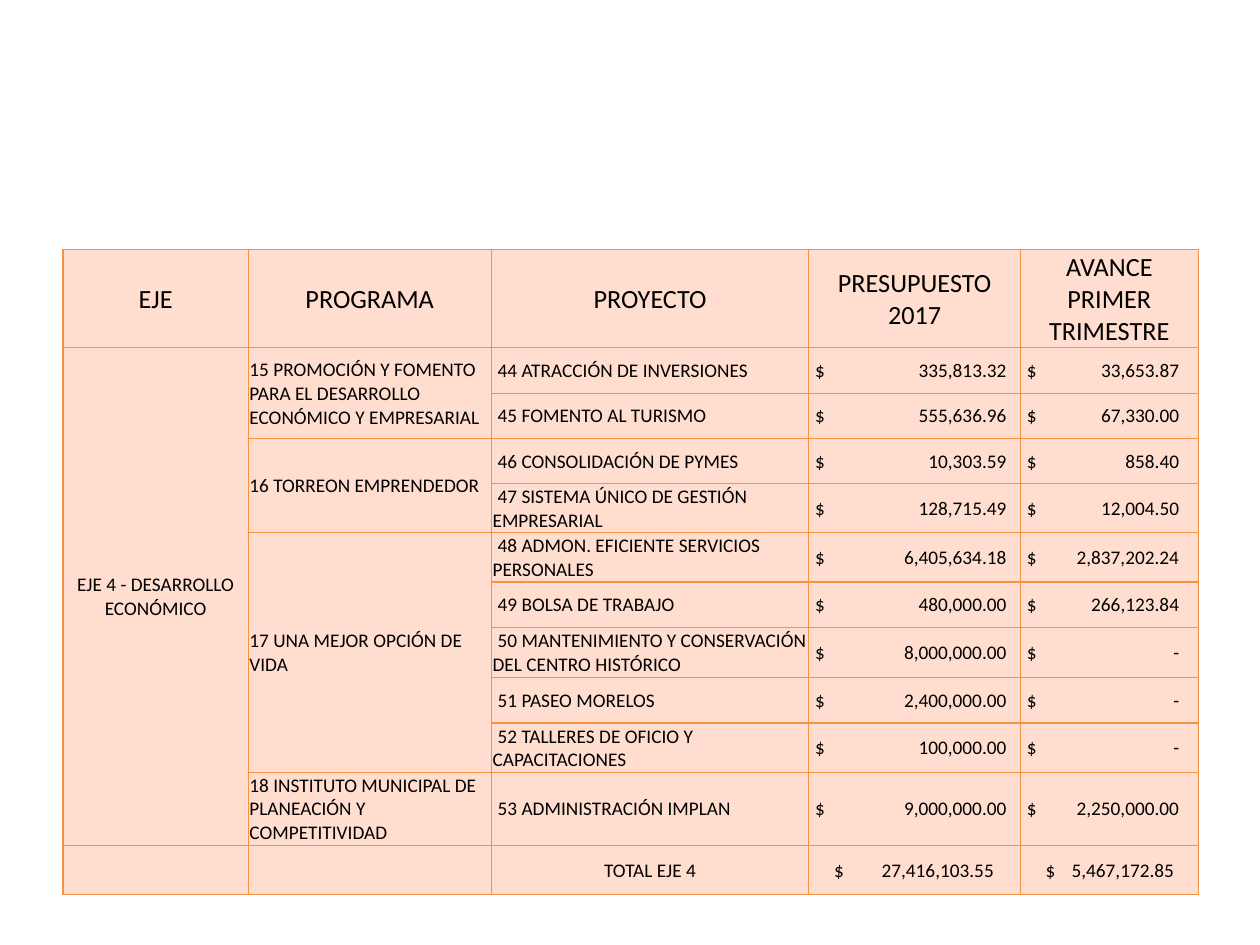
from lxml import etree
from pptx import Presentation
from pptx import util as u
from pptx.dml.color import RGBColor
from pptx.enum import text
from pptx.oxml.ns import qn

PEACH = RGBColor(0xFF, 0xDD, 0xCF)
ORANGE = RGBColor(0xF6, 0x92, 0x40)
BLACK = RGBColor(0, 0, 0)
FONT = "Calibri"
LEFT, CENTER = text.PP_ALIGN.LEFT, text.PP_ALIGN.CENTER

COLUMNS = [147, 193, 252, 168, 141]
ROWS = [78, 36, 36, 36, 39, 39, 36, 40, 36, 39, 58, 39]
AMOUNT_COLUMNS = {3: 152, 4: 121}
TOTAL_COLUMNS = {3: 127, 4: 102}

HEADINGS = ["EJE", "PROGRAMA", "PROYECTO", "PRESUPUESTO 2017", "AVANCE PRIMER TRIMESTRE"]
AXIS = "EJE 4 - DESARROLLO ECONÓMICO"
PROGRAMS = [
    ("15 PROMOCIÓN Y FOMENTO PARA EL DESARROLLO ECONÓMICO Y EMPRESARIAL", [
        ("44 ATRACCIÓN DE INVERSIONES", "335,813.32", "33,653.87"),
        ("45 FOMENTO AL TURISMO", "555,636.96", "67,330.00")]),
    ("16 TORREON EMPRENDEDOR", [
        ("46 CONSOLIDACIÓN DE PYMES", "10,303.59", "858.40"),
        ("47 SISTEMA ÚNICO DE GESTIÓN EMPRESARIAL", "128,715.49", "12,004.50")]),
    ("17 UNA MEJOR OPCIÓN DE VIDA", [
        ("48 ADMON. EFICIENTE SERVICIOS PERSONALES", "6,405,634.18", "2,837,202.24"),
        ("49 BOLSA DE TRABAJO", "480,000.00", "266,123.84"),
        ("50 MANTENIMIENTO Y CONSERVACIÓN DEL CENTRO HISTÓRICO", "8,000,000.00", "-"),
        ("51 PASEO MORELOS", "2,400,000.00", "-"),
        ("52 TALLERES DE OFICIO Y CAPACITACIONES", "100,000.00", "-")]),
    ("18 INSTITUTO MUNICIPAL DE PLANEACIÓN Y COMPETITIVIDAD", [
        ("53 ADMINISTRACIÓN IMPLAN", "9,000,000.00", "2,250,000.00")]),
]
TOTAL = ["TOTAL EJE 4", "27,416,103.55", "5,467,172.85"]


def style_cell(cell):
    """Give a cell its margins, orange borders and peach fill."""
    cell.margin_left = cell.margin_right = cell.margin_top = u.Inches(0.01)
    cell.margin_bottom = 0
    cell.vertical_anchor = text.MSO_ANCHOR.MIDDLE
    properties = cell._tc.get_or_add_tcPr()
    for side in ("lnL", "lnR", "lnT", "lnB"):
        line = etree.SubElement(properties, qn(f"a:{side}"), w=str(u.Pt(0.75)))
        fill = etree.SubElement(line, qn("a:solidFill"))
        etree.SubElement(fill, qn("a:srgbClr"), val=str(ORANGE))
    cell.fill.solid()
    cell.fill.fore_color.rgb = PEACH


def write_cell(cell, words, align=LEFT, size=11, indent=0):
    """Write one formatted paragraph in a cell."""
    para = cell.text_frame.paragraphs[0]
    para.text = words
    para.alignment = align
    if indent:
        para._p.get_or_add_pPr().set("indent", str(indent))
    for span in para.runs:
        span.font.name = FONT
        span.font.size = u.Pt(size)
        span.font.color.rgb = BLACK
    return para


def write_amount(cell, amount, margin, stop):
    """Write a currency sign at the left and an amount ending at a right tab."""
    cell.margin_left = margin
    para = write_cell(cell, f"$\t{amount}")
    tabs = etree.SubElement(para._p.get_or_add_pPr(), qn("a:tabLst"))
    etree.SubElement(tabs, qn("a:tab"), pos=str(stop), algn="r")


def add_budget_table(page, left, top, unit):
    """Place the budget table on a grid of the given unit."""
    frame = page.shapes.add_table(len(ROWS), len(COLUMNS), left, top,
                                  sum(COLUMNS) * unit, sum(ROWS) * unit)
    table = frame.table
    table.first_row = table.horz_banding = False
    for column, share in zip(table.columns, COLUMNS):
        column.width = share * unit
    for row, share in zip(table.rows, ROWS):
        row.height = share * unit
    for cell in table.iter_cells():
        style_cell(cell)

    for index, heading in enumerate(HEADINGS):
        write_cell(table.cell(0, index), heading, CENTER, 15)
    last = len(ROWS) - 1
    table.cell(1, 0).merge(table.cell(last - 1, 0))
    write_cell(table.cell(1, 0), AXIS, CENTER)

    row = 1
    for program, projects in PROGRAMS:
        if len(projects) > 1:
            table.cell(row, 1).merge(table.cell(row + len(projects) - 1, 1))
        write_cell(table.cell(row, 1), program)
        for project, *amounts in projects:
            write_cell(table.cell(row, 2), project, indent=4 * unit)
            for (column, stop), amount in zip(AMOUNT_COLUMNS.items(), amounts):
                write_amount(table.cell(row, column), amount, 5 * unit, stop * unit)
            row += 1

    write_cell(table.cell(last, 2), TOTAL[0], CENTER)
    for (column, stop), amount in zip(TOTAL_COLUMNS.items(), TOTAL[1:]):
        write_amount(table.cell(last, column), amount, 20 * unit, stop * unit)


def main():
    """Build and save the deck."""
    deck = Presentation()
    deck.slide_width, deck.slide_height = u.Inches(10), u.Inches(7.5)
    page = deck.slides.add_slide(deck.slide_layouts[6])
    unit = deck.slide_width // 1000
    add_budget_table(page, 50 * unit, 198 * unit, unit)
    deck.save("out.pptx")


if __name__ == "__main__":
    main()
